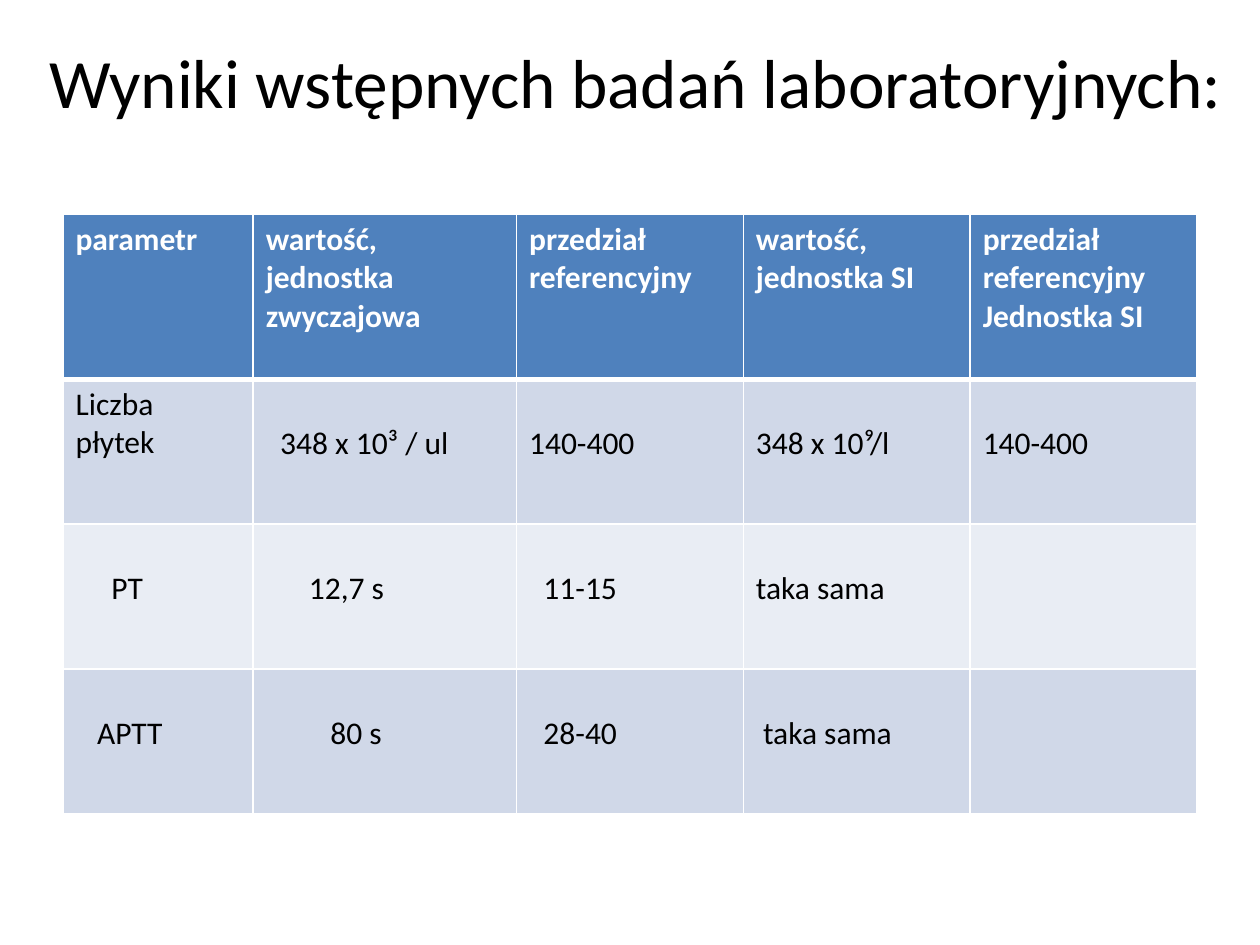
from lxml import etree
from pptx import Presentation
from pptx import util as u
from pptx.dml.color import RGBColor
from pptx.enum import text
from pptx.oxml.ns import qn

COLORS = {
    "ink": "000000",
    "white": "FFFFFF",
    "header": "4F81BD",
    "odd": "D0D8E8",
    "even": "E9EDF4",
}
FONT = "Calibri"
LINE = 0.31   # height of one 18 pt line, inches
SPACE = 0.057  # width of one 18 pt space, inches


def write(frame, content, size=18, color="ink", bold=False, align=text.PP_ALIGN.LEFT):
    """Fill a text frame, one paragraph for each line of the content."""
    frame.word_wrap = True
    for index, line in enumerate(content.split("\n")):
        para = frame.paragraphs[0] if index == 0 else frame.add_paragraph()
        para.alignment = align
        para.font.size = u.Pt(size)
        if not line:
            continue
        span = para.add_run()
        span.text = line
        span.font.name = FONT
        span.font.size = u.Pt(size)
        span.font.bold = bold
        span.font.color.rgb = RGBColor.from_string(COLORS[color])


class SlideBuilder:
    def __init__(self, page):
        self.page = page

    def title(self, content, left, top, width, height):
        box = self.page.shapes.add_textbox(
            u.Inches(left), u.Inches(top), u.Inches(width), u.Inches(height))
        box.text_frame.vertical_anchor = text.MSO_ANCHOR.MIDDLE
        write(box.text_frame, content, size=39.6, align=text.PP_ALIGN.CENTER)

    def borders(self, cell, top=1, bottom=1):
        properties = cell._tc.get_or_add_tcPr()
        widths = {"a:lnL": 1, "a:lnR": 1, "a:lnT": top, "a:lnB": bottom}
        for index, (tag, width) in enumerate(widths.items()):
            line = etree.Element(qn(tag), w=str(u.Pt(width)))
            fill = etree.SubElement(line, qn("a:solidFill"))
            etree.SubElement(fill, qn("a:srgbClr"), val=COLORS["white"])
            properties.insert(index, line)

    def table(self, rows, left, top, widths, heights):
        frame = self.page.shapes.add_table(
            len(rows), len(widths), u.Inches(left), u.Inches(top),
            u.Inches(sum(widths)), u.Inches(sum(heights)))
        table = frame.table
        for column, width in zip(table.columns, widths):
            column.width = u.Inches(width)
        for row, height in zip(table.rows, heights):
            row.height = u.Inches(height)

        for r, row in enumerate(rows):
            header = r == 0
            fill = "header" if header else ("odd" if r % 2 else "even")
            for c, (content, indent) in enumerate(row):
                cell = table.cell(r, c)
                cell.fill.solid()
                cell.fill.fore_color.rgb = RGBColor.from_string(COLORS[fill])
                self.borders(cell, top=3 if r == 1 else 1, bottom=3 if header else 1)
                # Single-line values sit one line below the top of the cell
                lowered = not header and "\n" not in content
                cell.margin_top = u.Inches(0.05 + LINE * lowered)
                cell.margin_left = u.Inches(0.1 + SPACE * indent)
                write(cell.text_frame, content,
                      color="white" if header else "ink", bold=header)


# Each cell is its text and its indent in space widths
RESULTS = [
    [("parametr", 0), ("wartość, jednostka zwyczajowa", 0),
     ("przedział referencyjny", 0), ("wartość, jednostka SI", 0),
     ("przedział referencyjny\nJednostka SI", 0)],
    [("Liczba\npłytek", 0), ("348 x 10³ / ul", 2), ("140-400", 0),
     ("348 x 10⁹/l", 0), ("140-400", 0)],
    [("PT", 5), ("12,7 s", 6), ("11-15", 2), ("taka sama", 0), ("", 0)],
    [("APTT", 3), ("80 s", 9), ("28-40", 2), ("taka sama", 1), ("", 0)],
]


def main():
    deck = Presentation()
    deck.slide_width, deck.slide_height = u.Inches(10), u.Inches(7.5)
    builder = SlideBuilder(deck.slides.add_slide(deck.slide_layouts[6]))

    # Heading
    builder.title("Wyniki wstępnych badań laboratoryjnych:", 0.2, 0.13, 9.69, 1.02)

    # Laboratory results
    builder.table(RESULTS, 0.5, 1.7,
                  widths=[1.51, 2.09] + [1.8] * 3, heights=[1.31] + [1.15] * 3)

    deck.save("out.pptx")


if __name__ == "__main__":
    main()
